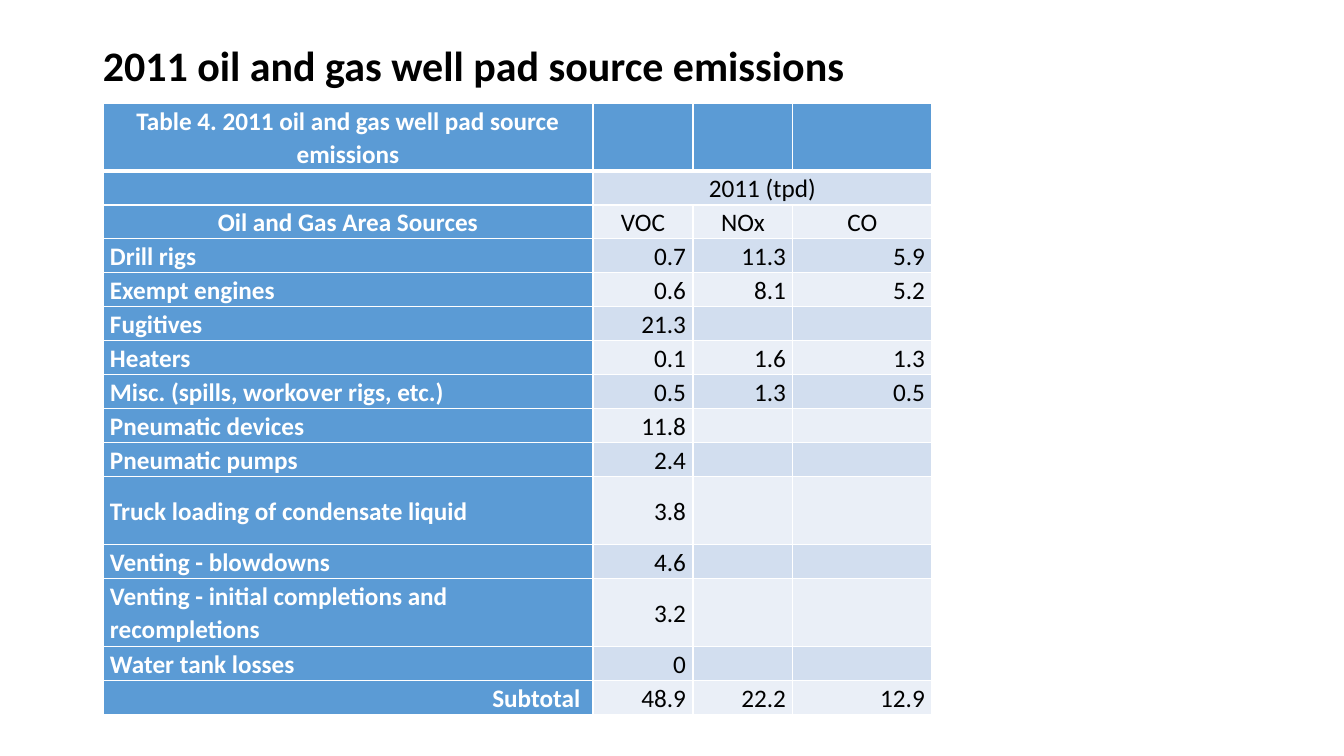
import pptx
import pptx.util
import pptx.dml.color
import pptx.enum.text
import pptx.oxml
import pptx.oxml.ns

TITLE = "2011 oil and gas well pad source emissions"
ROWS = [
    ("Table 4. 2011 oil and gas well pad source emissions", "", "", ""),
    ("", "2011 (tpd)", "", ""),
    ("Oil and Gas Area Sources", "VOC", "NOx", "CO"),
    ("Drill rigs", "0.7", "11.3", "5.9"),
    ("Exempt engines", "0.6", "8.1", "5.2"),
    ("Fugitives", "21.3", "", ""),
    ("Heaters", "0.1", "1.6", "1.3"),
    ("Misc. (spills, workover rigs, etc.)", "0.5", "1.3", "0.5"),
    ("Pneumatic devices", "11.8", "", ""),
    ("Pneumatic pumps", "2.4", "", ""),
    ("Truck loading of condensate liquid", "3.8", "", ""),
    ("Venting - blowdowns", "4.6", "", ""),
    ("Venting - initial completions and recompletions", "3.2", "", ""),
    ("Water tank losses", "0", "", ""),
    ("Subtotal ", "48.9", "22.2", "12.9"),
]
HEADING_ROWS = 3
TALL_ROWS = {0, 10, 12}
SUBTOTAL_ROW = len(ROWS) - 1

SLIDE = (1344, 756)
TITLE_BOX = (93, 40, 1159, 70)
TABLE_AT = (103, 103)
COL_WIDTHS = (490, 100, 100, 139)
ROW_HEIGHT = 34
CELL_MARGINS = {"margin_left": 7, "margin_right": 7, "margin_top": 0, "margin_bottom": 0}

THEME = {
    "font": "Calibri", "title_size": 30, "cell_size": 18,
    "text": "000000", "label_text": "FFFFFF", "border": "FFFFFF",
    "label_fill": "5B9BD5", "bands": ("EAEFF7", "D2DEEF"),
    "rule": 1, "heading_rule": 3,
}
ALIGN = pptx.enum.text.PP_ALIGN
ANCHOR = pptx.enum.text.MSO_ANCHOR


def px(n):
    return pptx.util.Emu(round(n * 914400 / 100.8))


def rgb(color):
    return pptx.dml.color.RGBColor.from_string(color)


def write(tf, text, size, color, bold, align, spacing):
    p = tf.paragraphs[0]
    p.alignment, p.line_spacing = align, spacing
    r = p.add_run()
    r.text = text
    fmt = {"name": THEME["font"], "size": pptx.util.Pt(size), "bold": bold}
    for name, value in fmt.items():
        setattr(r.font, name, value)
    r.font.color.rgb = rgb(color)


def set_borders(cell, widths):
    """Add one solid line per side; widths are points in the order L, R, T, B."""
    tc_pr = cell._tc.get_or_add_tcPr()
    for i, (side, width) in enumerate(zip("LRTB", widths)):
        tc_pr.insert(i, pptx.oxml.parse_xml(
            f'<a:ln{side} {pptx.oxml.ns.nsdecls("a")} w="{pptx.util.Pt(width)}">'
            f'<a:solidFill><a:srgbClr val="{THEME["border"]}"/></a:solidFill></a:ln{side}>'))


def cell_align(row, col):
    if row < HEADING_ROWS:
        return ALIGN.CENTER
    return ALIGN.RIGHT if col or row == SUBTOTAL_ROW else ALIGN.LEFT


def fill_cell(cell, row, col, text):
    for name, value in CELL_MARGINS.items():
        setattr(cell, name, px(value))
    cell.vertical_anchor = ANCHOR.MIDDLE
    label = row == 0 or col == 0
    cell.fill.solid()
    cell.fill.fore_color.rgb = rgb(THEME["label_fill"] if label else THEME["bands"][row % 2])
    thin, thick = THEME["rule"], THEME["heading_rule"]
    set_borders(cell, (thin, thin, thick if row == 1 else thin, thick if row == 0 else thin))
    if text:
        write(cell.text_frame, text, THEME["cell_size"],
              THEME["label_text" if label else "text"], label, cell_align(row, col), 1.07)


def add_title(s):
    tf = s.shapes.add_textbox(*map(px, TITLE_BOX)).text_frame
    tf.word_wrap = True
    tf.vertical_anchor = ANCHOR.TOP
    write(tf, TITLE, THEME["title_size"], THEME["text"], True, ALIGN.LEFT, 0.9)


def add_emissions_table(s):
    heights = [ROW_HEIGHT * (2 if i in TALL_ROWS else 1) for i in range(len(ROWS))]
    size = (sum(COL_WIDTHS), sum(heights))
    table = s.shapes.add_table(len(ROWS), len(COL_WIDTHS), *map(px, TABLE_AT + size)).table
    table.first_row = table.horz_banding = False
    for column, width in zip(table.columns, COL_WIDTHS):
        column.width = px(width)
    for i, (height, texts) in enumerate(zip(heights, ROWS)):
        table.rows[i].height = px(height)
        for j, text in enumerate(texts):
            fill_cell(table.cell(i, j), i, j, text)
    table.cell(1, 1).merge(table.cell(1, 3))


def main():
    prs = pptx.Presentation()
    prs.slide_width, prs.slide_height = map(px, SLIDE)
    s = prs.slides.add_slide(prs.slide_layouts[6])
    add_title(s)
    add_emissions_table(s)
    prs.save("out.pptx")


if __name__ == "__main__":
    main()
